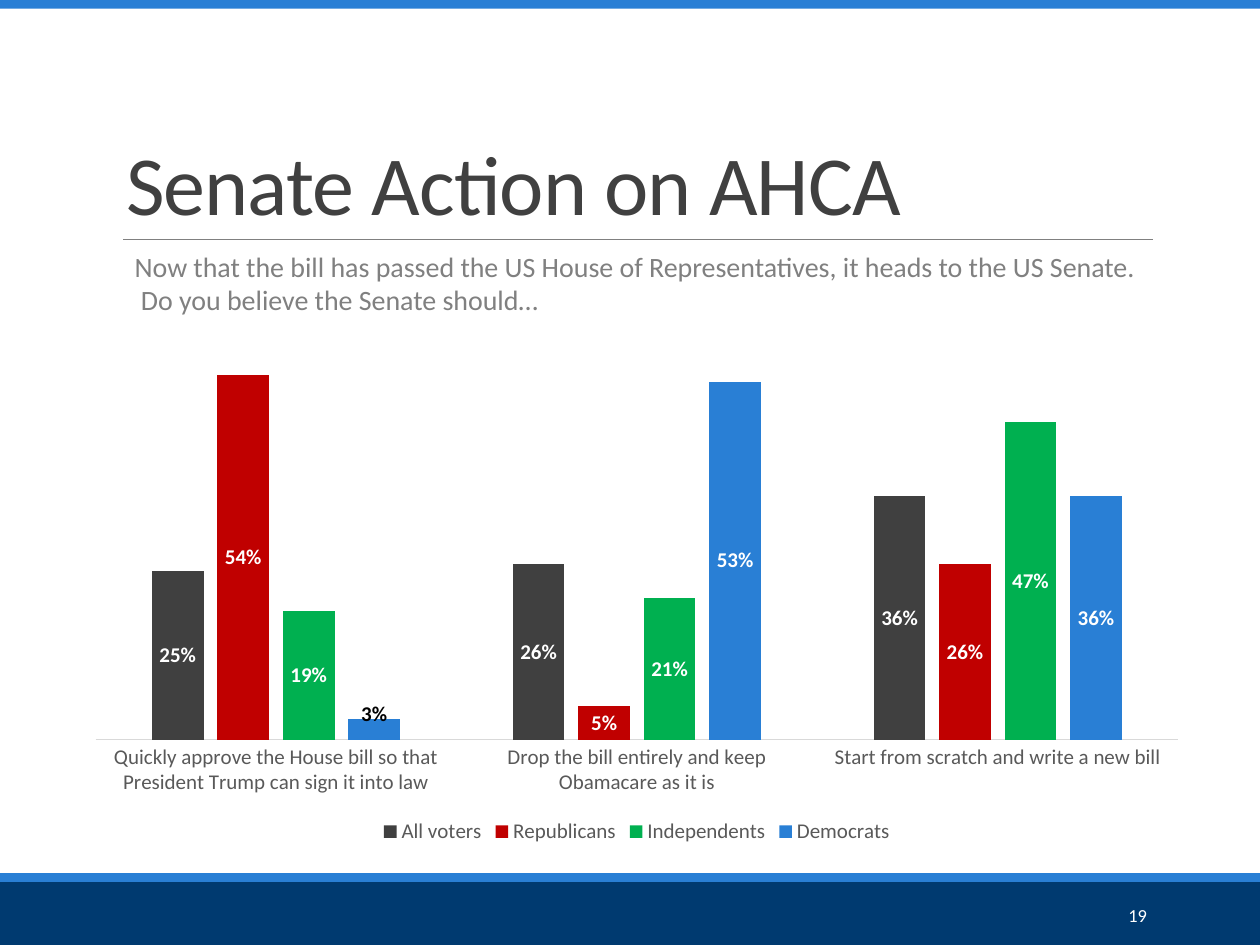
from lxml.etree import SubElement
from pptx import Presentation
from pptx.chart.data import CategoryChartData
from pptx.dml.color import RGBColor
from pptx.enum.chart import (XL_CHART_TYPE, XL_LABEL_POSITION,
                             XL_LEGEND_POSITION, XL_TICK_MARK)
from pptx.enum.shapes import MSO_CONNECTOR, MSO_SHAPE
from pptx.enum.text import MSO_ANCHOR, PP_ALIGN
from pptx.oxml import parse_xml
from pptx.oxml.ns import nsdecls, qn
from pptx.util import Pt

PX = 9144  # 100 px to the inch
FACE = "Calibri"
NAVY = RGBColor(0x00, 0x3A, 0x70)
BLUE = RGBColor(0x29, 0x7F, 0xD5)
RED = RGBColor(0xC0, 0x00, 0x00)
GREEN = RGBColor(0x00, 0xB0, 0x50)
DARK = RGBColor(0x40, 0x40, 0x40)
SLATE = RGBColor(0x59, 0x59, 0x59)
GRAY = RGBColor(0x80, 0x80, 0x80)
PALE = RGBColor(0xD9, 0xD9, 0xD9)
WHITE = RGBColor(0xFF, 0xFF, 0xFF)
BLACK = RGBColor(0x00, 0x00, 0x00)


def box(*sides):
    return [n * PX for n in sides]


def style(font, size, color, bold=False):
    font.name = FACE
    font.size = Pt(size)
    font.color.rgb = color
    font.bold = bold


deck = Presentation()
deck.slide_width, deck.slide_height = box(1000, 750)
slide = deck.slides.add_slide(deck.slide_layouts[5])
shapes = slide.shapes

# Bands at the top and foot
for top, high, color in ((700, 50, NAVY), (693, 7, BLUE), (0, 7, BLUE)):
    band = shapes.add_shape(MSO_SHAPE.RECTANGLE, *box(0, top, 1000, high))
    band.shadow.inherit = False
    band.fill.solid()
    band.fill.fore_color.rgb = color
    band.line.fill.background()

# Rule under the title
rule = shapes.add_connector(MSO_CONNECTOR.STRAIGHT, *box(98, 190, 915, 190))
rule.line.color.rgb = GRAY
rule.line.width = Pt(0.5)
SubElement(rule._element.spPr, qn("a:effectLst"))

# Title
title = shapes.title
title.left, title.top, title.width, title.height = box(90, 31, 825, 159)
frame = title.text_frame
frame.text = "Senate Action on AHCA"
frame.vertical_anchor = MSO_ANCHOR.BOTTOM
para = frame.paragraphs[0]
para.alignment = PP_ALIGN.LEFT
para.line_spacing = 0.85
style(para.font, 48, DARK)
para.runs[0]._r.get_or_add_rPr().set("spc", "-50")

# Question and page number
texts = (
    ("Now that the bill has passed the US House of Representatives, "
     "it heads to the US Senate.  Do you believe the Senate should…",
     (97, 193, 818, 64), 16, GRAY, PP_ALIGN.LEFT, MSO_ANCHOR.TOP),
    ("19", (812, 706, 108, 40), 10.5, WHITE, PP_ALIGN.RIGHT, MSO_ANCHOR.MIDDLE),
)
for words, sides, size, color, align, anchor in texts:
    frame = shapes.add_textbox(*box(*sides)).text_frame
    frame.word_wrap = True
    frame.vertical_anchor = anchor
    frame.text = words
    para = frame.paragraphs[0]
    para.alignment = align
    style(para.font, size, color)

# Poll results
data = CategoryChartData(number_format="0%")
data.categories = (
    "Quickly approve the House bill so that President Trump can sign it into law",
    "Drop the bill entirely and keep Obamacare as it is",
    "Start from scratch and write a new bill",
)
groups = (
    ("All voters", (0.25, 0.26, 0.36), DARK),
    ("Republicans", (0.54, 0.05, 0.26), RED),
    ("Independents", (0.19, 0.21, 0.47), GREEN),
    ("Democrats", (0.03, 0.53, 0.36), BLUE),
)
for name, shares, color in groups:
    data.add_series(name, shares)
chart = shapes.add_chart(XL_CHART_TYPE.COLUMN_CLUSTERED,
                         *box(58, 257, 895, 417), data).chart
style(chart.font, 10, BLACK)
chart.has_title = False
chart.has_legend = True
chart.legend.position = XL_LEGEND_POSITION.BOTTOM
chart.legend.include_in_layout = False
style(chart.legend.font, 12, SLATE)

# Axes
axis = chart.category_axis
axis.major_tick_mark = XL_TICK_MARK.NONE
axis.format.line.color.rgb = PALE
axis.format.line.width = Pt(0.75)
style(axis.tick_labels.font, 12, SLATE)
scale = chart.value_axis
scale.visible = False
scale.has_major_gridlines = False
scale.minimum_scale = 0
scale.maximum_scale = 0.6

# Bars and their labels
plot = chart.plots[0]
plot.gap_width = 219
plot.overlap = -27
plot.vary_by_categories = False
for bars, (name, shares, color) in zip(plot.series, groups):
    bars.format.fill.solid()
    bars.format.fill.fore_color.rgb = color
    labels = bars.data_labels
    labels.show_value = True
    labels.number_format = "0%"
    labels.number_format_is_linked = False
    labels.position = XL_LABEL_POSITION.CENTER
    style(labels.font, 12, WHITE, True)

# The shortest bar has its label lifted, in black
label = plot.series[3].points[0].data_label
style(label.font, 12, BLACK, True)
label.position = XL_LABEL_POSITION.CENTER
mark = plot.series[3].data_labels._element.find(qn("c:dLbl"))
mark.insert(1, parse_xml(
    f'<c:layout {nsdecls("c")}><c:manualLayout>'
    '<c:x val="0"/><c:y val="-0.03"/></c:manualLayout></c:layout>'))

deck.save("out.pptx")
